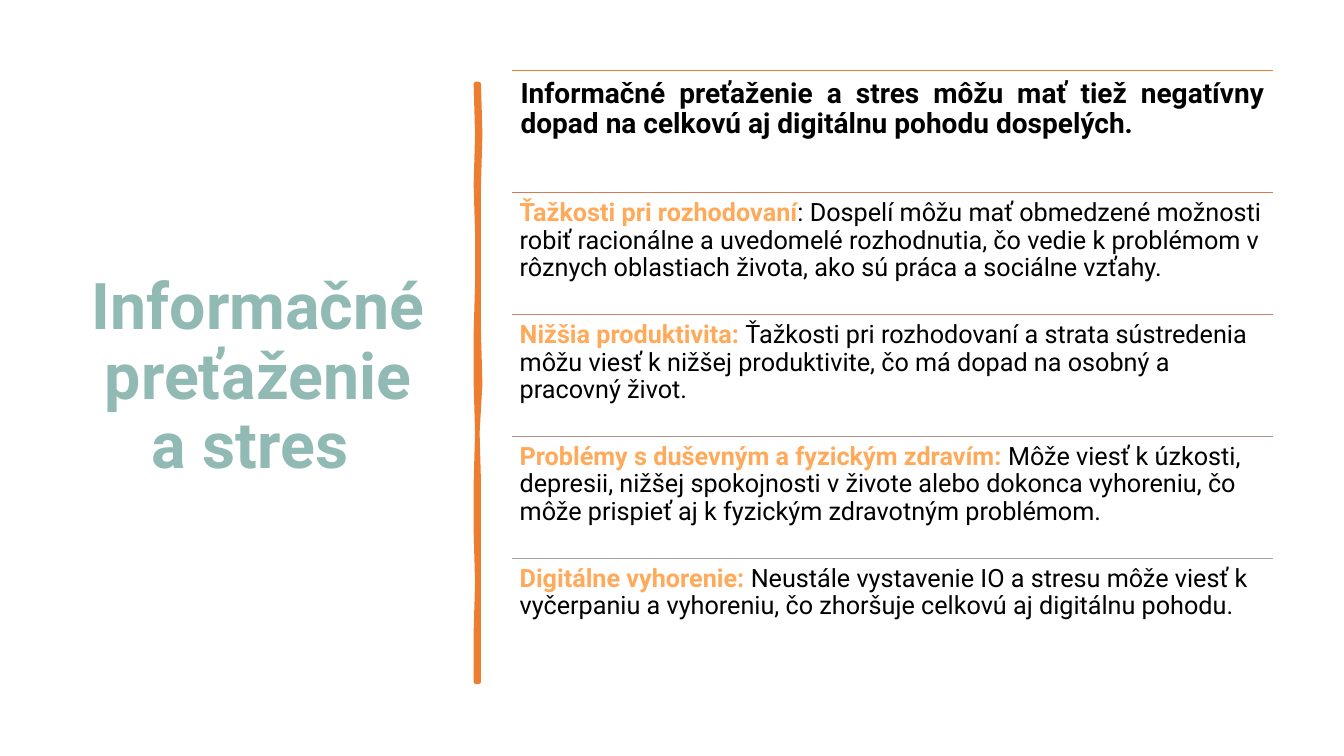
"""Build a slide on information overload: a title, a wavy divider and five ruled rows."""
from dataclasses import dataclass

from lxml import etree
from pptx import Presentation
from pptx import util as u
from pptx.dml.color import RGBColor
from pptx.enum import shapes, text
from pptx.oxml.ns import qn


@dataclass(frozen=True)
class Theme:
    font: str = "Roboto"
    title: str = "92BAB5"
    label: str = "FFAA5A"
    body: str = "000000"
    divider: str = "ED7D31"
    rules: tuple = ("ED7D31", "D87A51", "C48170", "B4908B", "A5A5A5")
    title_size: int = 46
    lead_size: int = 20
    row_size: int = 18


theme = Theme()


def add_run(paragraph, wording, size, color, bold):
    """Append one formatted run to a paragraph."""
    run = paragraph.add_run()
    run.text = wording
    for name, value in {"name": theme.font, "size": u.Pt(size), "bold": bold}.items():
        setattr(run.font, name, value)
    run.font.color.rgb = RGBColor.from_string(color)


def format_frame(frame, inset, anchor, alignment, space_after):
    """Set the frame and its first paragraph, and return that paragraph."""
    frame_format = {"word_wrap": True, "auto_size": text.MSO_AUTO_SIZE.NONE,
                    "vertical_anchor": anchor}
    for side in ("left", "top", "right", "bottom"):
        frame_format[f"margin_{side}"] = u.Pt(inset)
    for name, value in frame_format.items():
        setattr(frame, name, value)
    paragraph = frame.paragraphs[0]
    paragraph_format = {"alignment": alignment, "line_spacing": 0.9,
                        "space_before": u.Pt(0), "space_after": u.Pt(space_after)}
    for name, value in paragraph_format.items():
        setattr(paragraph, name, value)
    return paragraph


presentation = Presentation()
presentation.slide_width = u.Pt(960)
presentation.slide_height = u.Pt(540)
slide = presentation.slides.add_slide(presentation.slide_layouts[5])

title = slide.shapes.title
title_box = {"left": 49.7, "top": 50.4, "width": 269.3, "height": 439.9}
for name, value in title_box.items():
    setattr(title, name, u.Pt(value))
paragraph = format_frame(title.text_frame, 10, text.MSO_ANCHOR.MIDDLE,
                         text.PP_ALIGN.CENTER, 6)
add_run(paragraph, "Informačné preťaženie a stres ", theme.title_size, theme.title, True)

divider_top, divider_bottom = 60.5, 486.7
right_edge = [342, 342.7, 341.6, 342, 341.8, 342.4, 342.7, 341.4, 341.5, 342.5, 342.4, 341.8, 342]
left_edge = [340.4, 341, 339.8, 340.6, 340.8, 340.2, 340.4, 341, 339.8, 340, 340.8, 340, 340.4]
step = (divider_bottom - divider_top) / (len(right_edge) - 1)
outline = [(x, divider_top + index * step) for index, x in enumerate(right_edge)]
outline += [(x, divider_top + index * step) for index, x in enumerate(left_edge)][::-1]
builder = slide.shapes.build_freeform(*outline[0], scale=u.Pt(1))
builder.add_line_segments(outline[1:], close=True)
divider = builder.convert_to_shape()
divider.shadow.inherit = False
divider.fill.solid()
divider.fill.fore_color.rgb = RGBColor.from_string(theme.divider)
divider.line.color.rgb = RGBColor.from_string(theme.divider)
divider.line.width = u.Pt(3.25)

rows = [
    ("", "Informačné preťaženie a stres môžu mať tiež negatívny dopad na celkovú aj "
         "digitálnu pohodu dospelých."),
    ("Ťažkosti pri rozhodovaní",
     ": Dospelí môžu mať obmedzené možnosti robiť racionálne a uvedomelé rozhodnutia, "
     "čo vedie k problémom v rôznych oblastiach života, ako sú práca a sociálne vzťahy."),
    ("Nižšia produktivita: ",
     "Ťažkosti pri rozhodovaní a strata sústredenia môžu viesť k nižšej produktivite, "
     "čo má dopad na osobný a pracovný život."),
    ("Problémy s duševným a fyzickým zdravím: ",
     "Môže viesť k úzkosti, depresii, nižšej spokojnosti v živote alebo dokonca "
     "vyhoreniu, čo môže prispieť aj k fyzickým zdravotným problémom."),
    ("Digitálne vyhorenie: ",
     "Neustále vystavenie IO a stresu môže viesť k vyčerpaniu a vyhoreniu, "
     "čo zhoršuje celkovú aj digitálnu pohodu."),
]
row_left, row_top, row_width, row_height = 365.8, 50.4, 543.6, 87.1

for index, ((label, wording), rule_color) in enumerate(zip(rows, theme.rules)):
    top = row_top + index * row_height
    rule = slide.shapes.add_connector(
        shapes.MSO_CONNECTOR.STRAIGHT, u.Pt(row_left), u.Pt(top),
        u.Pt(row_left + row_width), u.Pt(top))
    rule.line.color.rgb = RGBColor.from_string(rule_color)
    rule.line.width = u.Pt(1)
    etree.SubElement(rule._element.spPr, qn("a:effectLst"))

    row = slide.shapes.add_textbox(u.Pt(row_left), u.Pt(top), u.Pt(row_width), u.Pt(row_height))
    is_lead = not label
    size = theme.lead_size if is_lead else theme.row_size
    alignment = text.PP_ALIGN.JUSTIFY if is_lead else text.PP_ALIGN.LEFT
    paragraph = format_frame(row.text_frame, 6 if is_lead else 5.4,
                             text.MSO_ANCHOR.TOP, alignment, 6)
    if label:
        add_run(paragraph, label, size, theme.label, True)
    add_run(paragraph, wording, size, theme.body, is_lead)

presentation.save("out.pptx")
